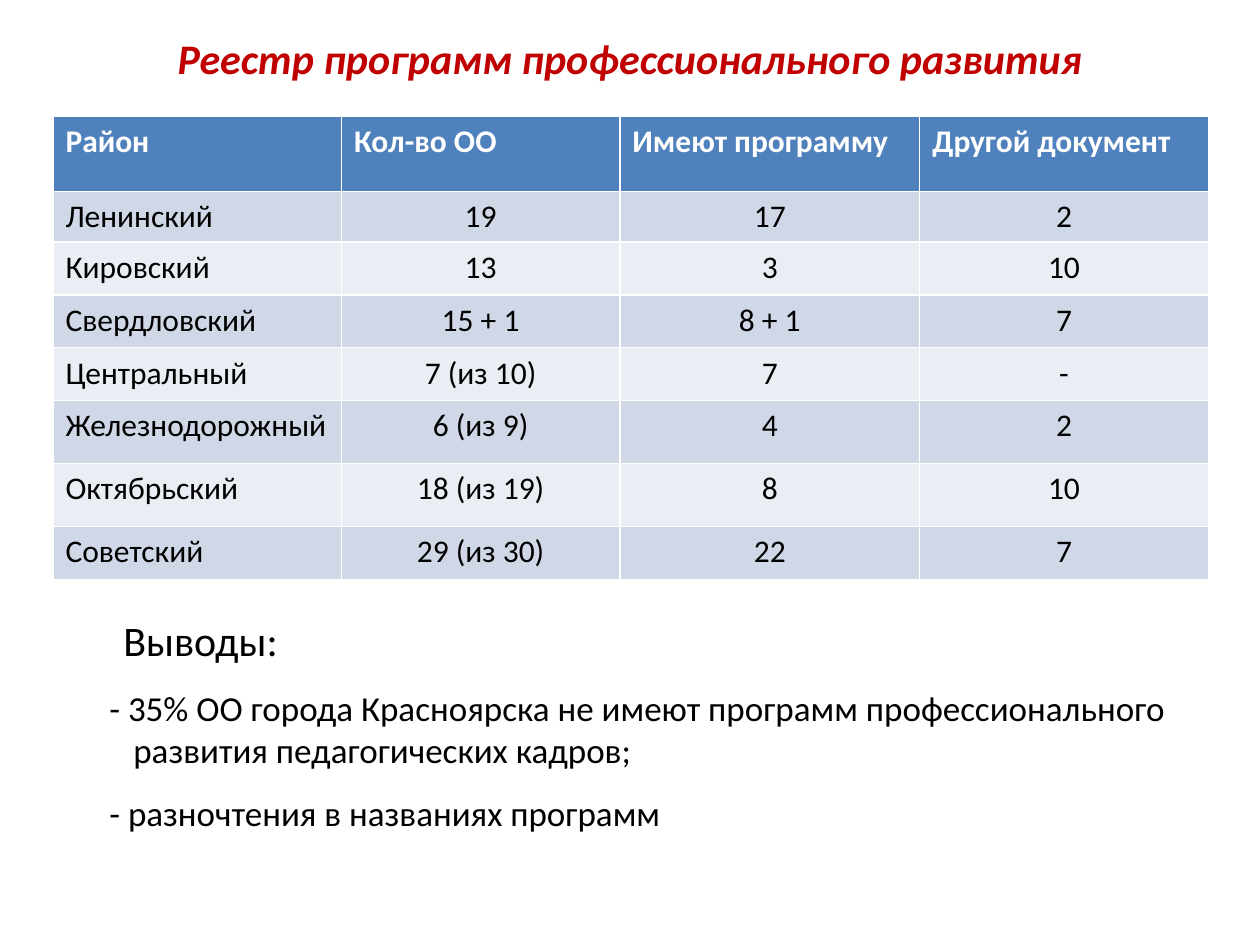
from dataclasses import dataclass

from pptx import Presentation
from pptx.dml.color import RGBColor
from pptx.enum import text
from pptx.util import Inches, Pt


@dataclass(frozen=True)
class Theme:
    font: str = "Calibri"
    title_color: str = "C00000"
    text_color: str = "000000"
    header_text: str = "FFFFFF"
    header_fill: str = "4F81BD"
    bands: tuple = ("D0D8E8", "E9EDF4")
    heading_size: int = 24
    body_size: int = 20
    table_size: int = 18


THEME = Theme()

TITLE = "Реестр программ профессионального развития"
DISTRICTS = [
    ("Район", "Кол-во ОО", "Имеют программу", "Другой документ"),
    ("Ленинский", "19", "17", "2"),
    ("Кировский", "13", "3", "10"),
    ("Свердловский", "15 + 1", "8 + 1", "7"),
    ("Центральный", "7 (из 10)", "7", "-"),
    ("Железнодорожный", "6 (из 9)", "4", "2"),
    ("Октябрьский", "18 (из 19)", "8", "10"),
    ("Советский", "29 (из 30)", "22", "7"),
]
COLUMN_WIDTHS = (2.29, 2.21, 2.38, 2.29)
ROW_HEIGHTS = (0.6, 0.4, 0.42, 0.42, 0.42, 0.5, 0.5, 0.42)

# Text, size, first-line indent in inches
CONCLUSIONS = [
    ("Выводы:", THEME.heading_size, -0.08),
    ("- 35% ОО города Красноярска не имеют программ профессионального "
     "развития педагогических кадров;", THEME.body_size, -0.19),
    ("- разночтения в названиях программ", THEME.body_size, -0.19),
]
HANGING_MARGIN = 0.38


def set_font(paragraph, size, color, bold=False, italic=False):
    font = paragraph.font
    font.name = THEME.font
    font.size = Pt(size)
    font.color.rgb = RGBColor.from_string(color)
    font.bold = bold
    font.italic = italic


def add_title(slide):
    title = slide.shapes.title
    title.left, title.top = Inches(0.5), Inches(0.17)
    title.width, title.height = Inches(9), Inches(0.58)
    frame = title.text_frame
    frame.text = TITLE
    frame.vertical_anchor = text.MSO_ANCHOR.MIDDLE
    paragraph = frame.paragraphs[0]
    paragraph.alignment = text.PP_ALIGN.CENTER
    set_font(paragraph, THEME.heading_size, THEME.title_color, bold=True, italic=True)


def fill_cell(cell, value, row, column):
    header = row == 0
    fill = THEME.header_fill if header else THEME.bands[(row - 1) % 2]
    cell.fill.solid()
    cell.fill.fore_color.rgb = RGBColor.from_string(fill)
    cell.text = value
    paragraph = cell.text_frame.paragraphs[0]
    if not header and column > 0:
        paragraph.alignment = text.PP_ALIGN.CENTER
    color = THEME.header_text if header else THEME.text_color
    set_font(paragraph, THEME.table_size, color, bold=header)


def add_district_table(slide):
    frame = slide.shapes.add_table(
        len(DISTRICTS), len(COLUMN_WIDTHS), Inches(0.42), Inches(0.92),
        Inches(sum(COLUMN_WIDTHS)), Inches(sum(ROW_HEIGHTS)))
    table = frame.table
    for column, width in zip(table.columns, COLUMN_WIDTHS):
        column.width = Inches(width)
    for row, height in zip(table.rows, ROW_HEIGHTS):
        row.height = Inches(height)
    for row, values in enumerate(DISTRICTS):
        for column, value in enumerate(values):
            fill_cell(table.cell(row, column), value, row, column)


def add_conclusions(slide):
    box = slide.shapes.add_textbox(Inches(0.58), Inches(4.83), Inches(9.25), Inches(2.25))
    frame = box.text_frame
    frame.word_wrap = True
    for number, (line, size, indent) in enumerate(CONCLUSIONS):
        paragraph = frame.add_paragraph() if number else frame.paragraphs[0]
        paragraph.text = line
        paragraph.space_before = Pt(12)
        set_font(paragraph, size, THEME.text_color)
        # Hanging indent
        properties = paragraph._p.get_or_add_pPr()
        properties.set("marL", str(Inches(HANGING_MARGIN)))
        properties.set("indent", str(Inches(indent)))


def main():
    presentation = Presentation()
    presentation.slide_width, presentation.slide_height = Inches(10), Inches(7.5)
    title_only = presentation.slide_layouts[5]
    slide = presentation.slides.add_slide(title_only)
    add_title(slide)
    add_conclusions(slide)
    add_district_table(slide)
    presentation.save("out.pptx")


if __name__ == "__main__":
    main()
